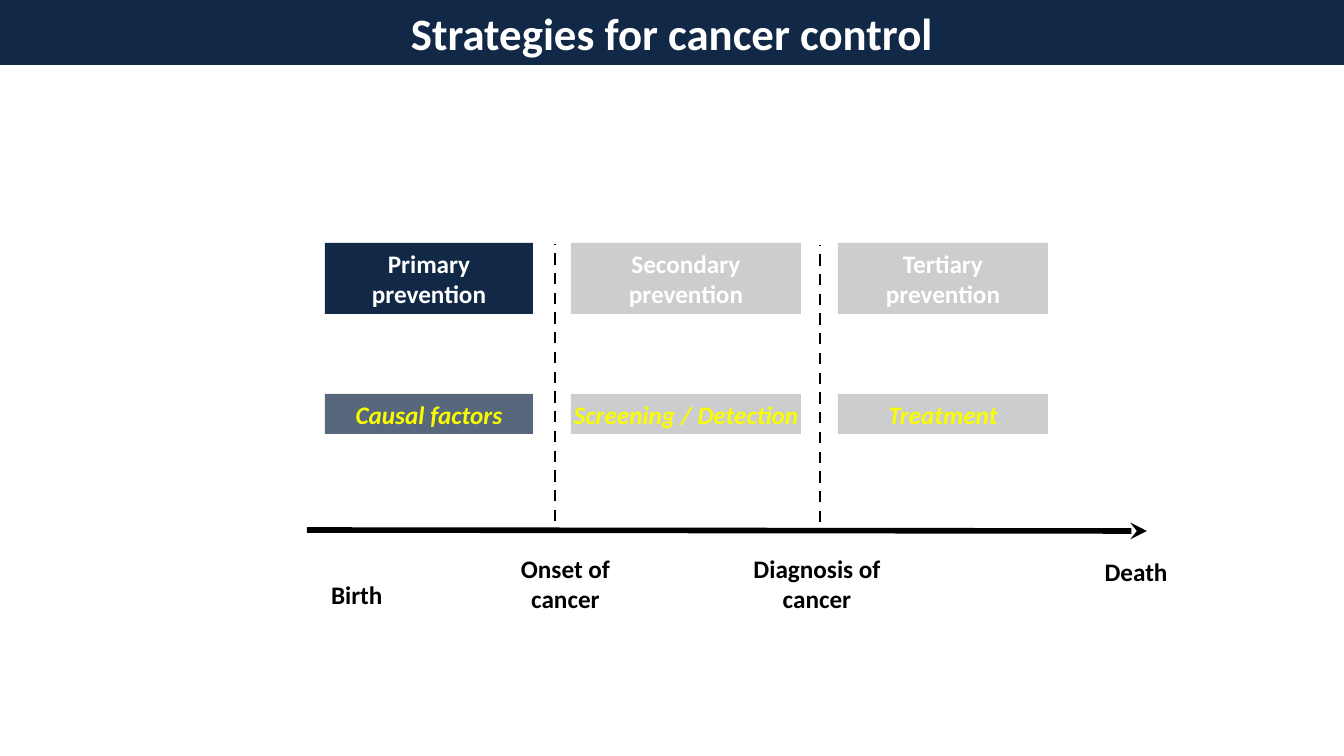
from lxml.etree import SubElement
from pptx import Presentation
from pptx.dml.color import RGBColor
from pptx.enum.dml import MSO_LINE
from pptx.enum.shapes import MSO_CONNECTOR, MSO_SHAPE
from pptx.enum.text import MSO_ANCHOR, PP_ALIGN
from pptx.oxml.ns import qn
from pptx.util import Emu, Pt

PX = 914400 / 100.8
THEME = {
    "font": "Calibri", "title": 32, "body": 18,
    "navy": "112946", "grey": "CCCDCE", "yellow": "FAFD00",
    "white": "FFFFFF", "black": "000000",
}


def write(sp, text, color, size="body", italic=False, align=PP_ALIGN.CENTER,
          side=10, anchor=MSO_ANCHOR.TOP):
    """Put one bold run in sp, with side as its left and right inset in px."""
    tf = sp.text_frame
    tf.word_wrap = True
    tf.vertical_anchor = anchor
    tf.margin_left = tf.margin_right = Emu(round(side * PX))
    tf.margin_top = tf.margin_bottom = Emu(round(5 * PX))
    p = tf.paragraphs[0]
    p.alignment = align
    r = p.add_run()
    r.text = text
    r.font.name = THEME["font"]
    r.font.size = Pt(THEME[size])
    r.font.bold = True
    r.font.italic = italic
    r.font.color.rgb = RGBColor.from_string(THEME[color])


def px(*lengths):
    return [Emu(round(v * PX)) for v in lengths]


prs = Presentation()
prs.slide_width, prs.slide_height = px(1344, 756)
s = prs.slides.add_slide(prs.slide_layouts[5])

# Title bar
title = s.shapes.title
title.left, title.top, title.width, title.height = px(0, 0, 1344, 65)
title.fill.solid()
title.fill.fore_color.rgb = RGBColor.from_string(THEME["navy"])
write(title, "Strategies for cancer control", "white", "title",
      anchor=MSO_ANCHOR.MIDDLE)

# Time axis and the two stage boundaries
lines = [
    (307, 530, 1147, 531, 4, False),
    (555, 521, 555, 244, 2, True),
    (820, 522, 820, 245, 2, True),
]
for x1, y1, x2, y2, weight, dashed in lines:
    line = s.shapes.add_connector(MSO_CONNECTOR.STRAIGHT, *px(x1, y1, x2, y2))
    line.line.width = Pt(weight)
    line.line.color.rgb = RGBColor.from_string(THEME["black"])
    if dashed:
        line.line.dash_style = MSO_LINE.DASH
    else:
        SubElement(line.line._get_or_add_ln(), qn("a:tailEnd"), type="stealth")
    SubElement(line._element.spPr, qn("a:effectLst"))

# Stages: prevention level above, its means below
stages = [
    (325, 208, "navy", "Primary prevention", "Causal factors", 10),
    (571, 230, "grey", "Secondary prevention", "Screening / Detection", 0),
    (838, 210, "grey", "Tertiary prevention", "Treatment", 2),
]
for x, w, fill, level, means, side in stages:
    for y, h, text, color, italic, inset in [
        (243, 71, level, "white", False, 10),
        (394, 40, means, "yellow", True, side),
    ]:
        sp = s.shapes.add_shape(MSO_SHAPE.RECTANGLE, *px(x, y, w, h))
        sp.shadow.inherit = False
        sp.line.fill.background()
        sp.fill.solid()
        sp.fill.fore_color.rgb = RGBColor.from_string(THEME[fill])
        if fill == "navy" and italic:
            clr = sp._element.spPr.find(qn("a:solidFill"))[0]
            SubElement(clr, qn("a:alpha"), val="70000")
        write(sp, text, color, italic=italic, side=inset)

# Events along the axis
events = [
    ("Birth", 321, 574, 206, 40, PP_ALIGN.LEFT),
    ("Onset of cancer", 488, 548, 155, 71, PP_ALIGN.CENTER),
    ("Diagnosis of cancer", 729, 548, 176, 71, PP_ALIGN.CENTER),
    ("Death", 1073, 551, 126, 40, PP_ALIGN.CENTER),
]
for text, x, y, w, h, align in events:
    write(s.shapes.add_textbox(*px(x, y, w, h)), text, "black", align=align)

prs.save("out.pptx")
